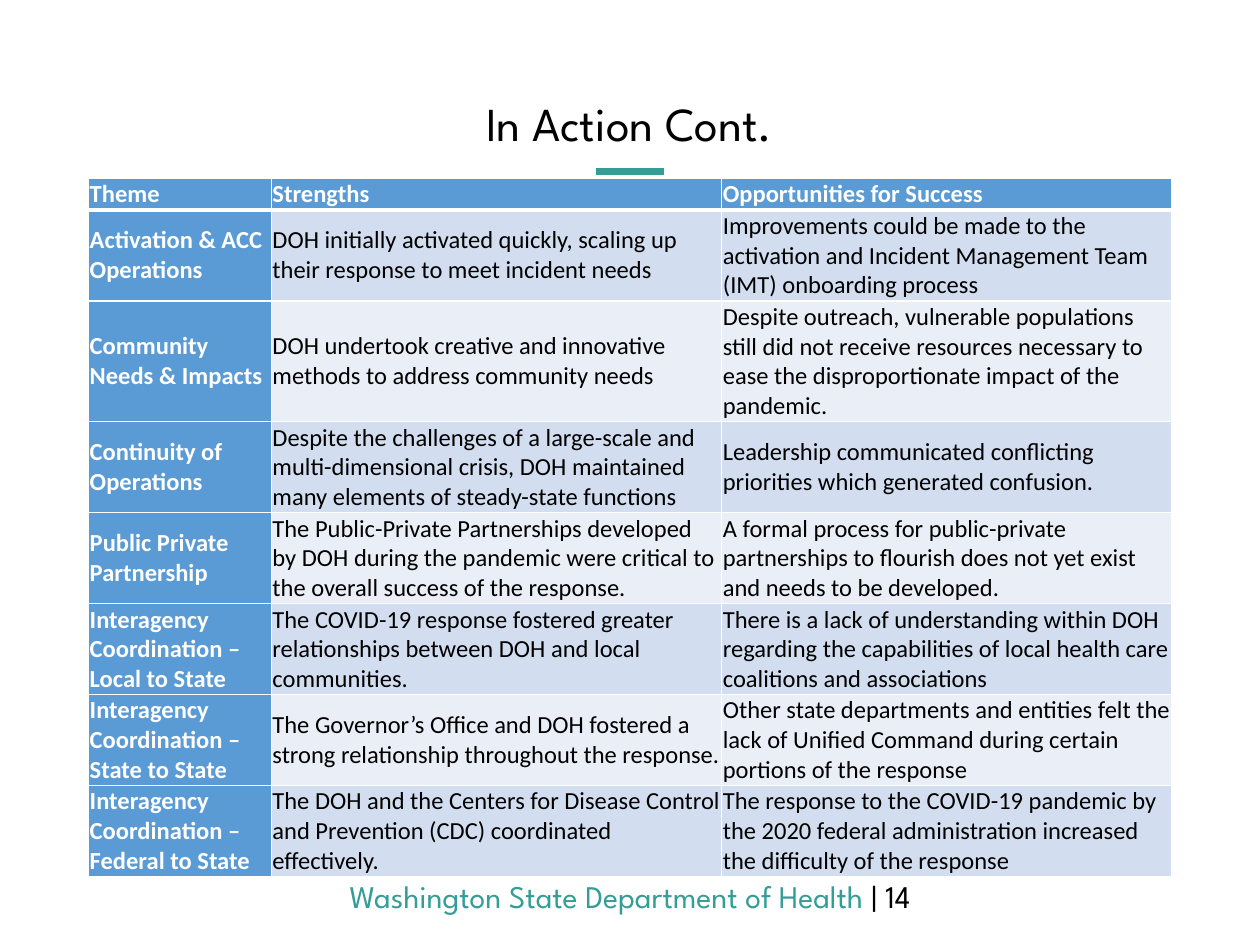
from lxml.etree import SubElement
from pptx import Presentation
from pptx.dml.color import RGBColor
from pptx.enum.shapes import MSO_CONNECTOR
from pptx.enum.text import MSO_ANCHOR, PP_ALIGN
from pptx.oxml.ns import qn
from pptx.util import Pt

TEAL = RGBColor(0x34, 0x9D, 0x96)
BLACK = RGBColor(0, 0, 0)
WHITE = RGBColor(0xFF, 0xFF, 0xFF)
BLUE = RGBColor(0x5B, 0x9B, 0xD5)
BANDS = (RGBColor(0xD2, 0xDE, 0xEF), RGBColor(0xEA, 0xEF, 0xF7))

HEADING_FONT = "League Spartan"
TABLE_FONT = "Calibri"
COLUMN_WIDTHS = (104.4, 257.4, 257.4)
ROW_HEIGHTS = (18, 52, 69, 52, 52, 52, 52, 52)
CELL_MARGIN = 0.7

THEMES = [
    ("Theme", "Strengths", "Opportunities for Success"),
    ("Activation & ACC Operations",
     "DOH initially activated quickly, scaling up their response to meet incident needs",
     "Improvements could be made to the activation and Incident Management Team (IMT) "
     "onboarding process"),
    ("Community Needs & Impacts",
     "DOH undertook creative and innovative methods to address community needs",
     "Despite outreach, vulnerable populations still did not receive resources necessary "
     "to ease the disproportionate impact of the pandemic."),
    ("Continuity of Operations",
     "Despite the challenges of a large-scale and multi-dimensional crisis, DOH maintained "
     "many elements of steady-state functions",
     "Leadership communicated conflicting priorities which generated confusion."),
    ("Public Private Partnership",
     "The Public-Private Partnerships developed by DOH during the pandemic were critical to "
     "the overall success of the response.",
     "A formal process for public-private partnerships to flourish does not yet exist and "
     "needs to be developed."),
    ("Interagency Coordination – Local to State",
     "The COVID-19 response fostered greater relationships between DOH and local communities.",
     "There is a lack of understanding within DOH regarding the capabilities of local health "
     "care coalitions and associations"),
    ("Interagency Coordination – State to State",
     "The Governor’s Office and DOH fostered a strong relationship throughout the response.",
     "Other state departments and entities felt the lack of Unified Command during certain "
     "portions of the response"),
    ("Interagency Coordination – Federal to State",
     "The DOH and the Centers for Disease Control and Prevention (CDC) coordinated effectively.",
     "The response to the COVID-19 pandemic by the 2020 federal administration increased the "
     "difficulty of the response"),
]


def add_text(paragraph, text, *, font, size, color, bold=False):
    run = paragraph.add_run()
    run.text = text
    run.font.name = font
    run.font.size = Pt(size)
    run.font.color.rgb = color
    run.font.bold = bold


def add_centered_box(slide, left, top, width, height, anchor=MSO_ANCHOR.TOP):
    """Add an empty text box and return its paragraph."""
    box = slide.shapes.add_textbox(Pt(left), Pt(top), Pt(width), Pt(height))
    box.text_frame.word_wrap = True
    box.text_frame.vertical_anchor = anchor
    paragraph = box.text_frame.paragraphs[0]
    paragraph.alignment = PP_ALIGN.CENTER
    return paragraph


def add_title(slide):
    title = add_centered_box(slide, 0, 53.3, 719.3, 38.2, MSO_ANCHOR.MIDDLE)
    title.line_spacing = 0.9
    add_text(title, "In Action Cont.", font=HEADING_FONT, size=27, color=BLACK)


def add_title_rule(slide):
    rule = slide.shapes.add_connector(
        MSO_CONNECTOR.STRAIGHT, Pt(340.5), Pt(98), Pt(379.5), Pt(98))
    rule.line.color.rgb = TEAL
    rule.line.width = Pt(4)
    SubElement(rule._element.spPr, qn("a:effectLst"))


def add_footer(slide):
    footer = add_centered_box(slide, 0, 497.5, 720, 29)
    for text, color in (("Washington State Department of Health ", TEAL), ("| 14", BLACK)):
        add_text(footer, text, font=HEADING_FONT, size=18, color=color)


def set_borders(cell, **widths):
    """Draw white borders; widths maps L, R, T and B to points."""
    properties = cell._tc.get_or_add_tcPr()
    for side, width in widths.items():
        border = SubElement(properties, qn(f"a:ln{side}"), w=str(Pt(width)))
        fill = SubElement(border, qn("a:solidFill"))
        SubElement(fill, qn("a:srgbClr"), val=str(WHITE))


def fill_cell(cell, text, row, column):
    is_header = row == 0
    is_heading = is_header or column == 0
    cell.margin_left = cell.margin_right = Pt(CELL_MARGIN)
    cell.margin_top = cell.margin_bottom = Pt(CELL_MARGIN)
    cell.vertical_anchor = MSO_ANCHOR.TOP if is_header else MSO_ANCHOR.MIDDLE
    set_borders(cell, L=1, R=1, T=3 if row == 1 else 1, B=3 if is_header else 1)
    cell.fill.solid()
    cell.fill.fore_color.rgb = BLUE if is_heading else BANDS[(row - 1) % 2]
    add_text(cell.text_frame.paragraphs[0], text, font=TABLE_FONT, size=14,
             color=WHITE if is_heading else BLACK, bold=is_heading)


def add_theme_table(slide):
    table = slide.shapes.add_table(
        len(THEMES), len(COLUMN_WIDTHS), Pt(50.6), Pt(101.7),
        Pt(sum(COLUMN_WIDTHS)), Pt(sum(ROW_HEIGHTS))).table
    for column, width in zip(table.columns, COLUMN_WIDTHS):
        column.width = Pt(width)
    for row, height in zip(table.rows, ROW_HEIGHTS):
        row.height = Pt(height)
    for row, texts in enumerate(THEMES):
        for column, text in enumerate(texts):
            fill_cell(table.cell(row, column), text, row, column)


def main():
    presentation = Presentation()
    presentation.slide_width = Pt(720)
    presentation.slide_height = Pt(540)
    slide = presentation.slides.add_slide(presentation.slide_layouts[6])
    add_title_rule(slide)
    add_footer(slide)
    add_title(slide)
    add_theme_table(slide)
    presentation.save("out.pptx")


if __name__ == "__main__":
    main()
